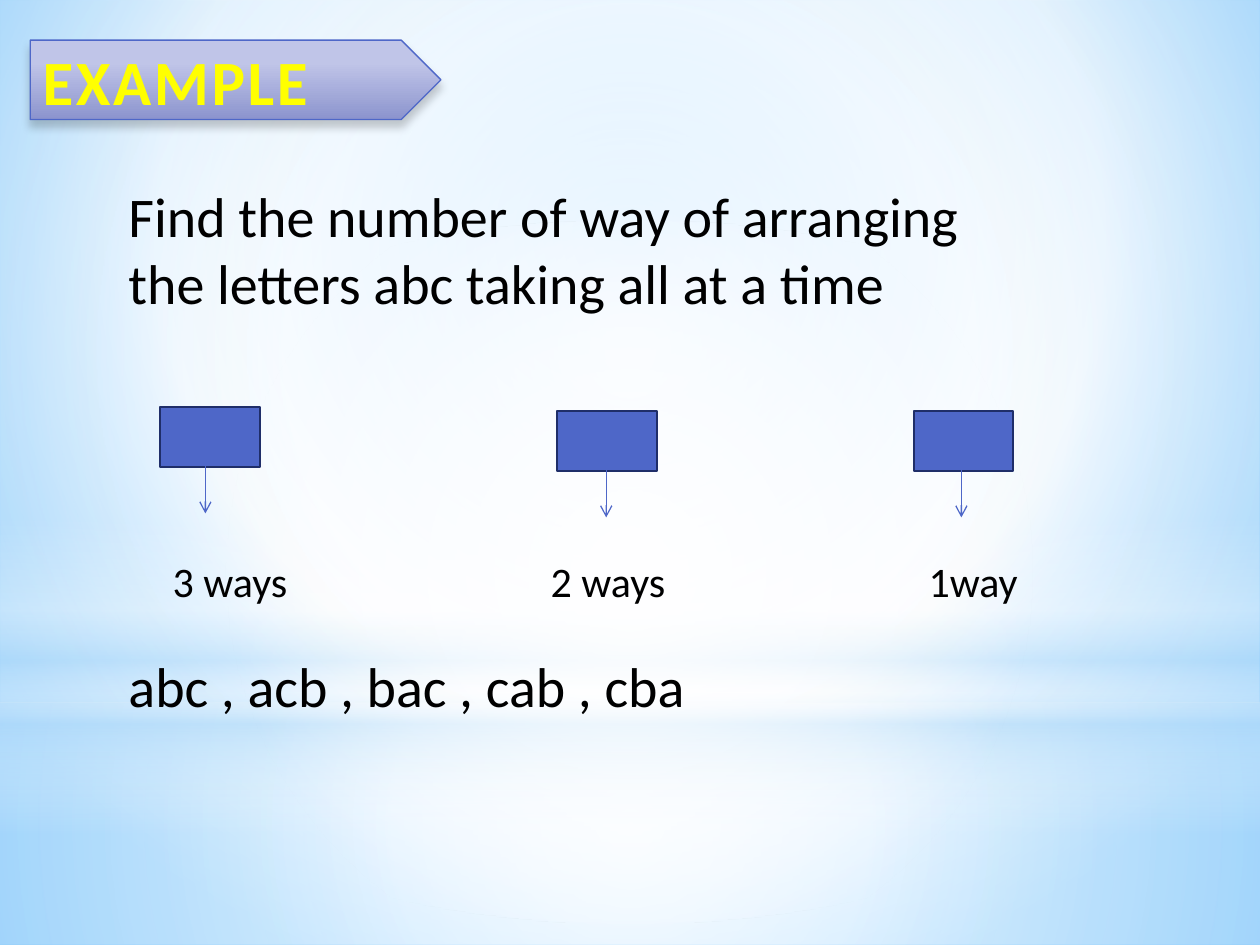
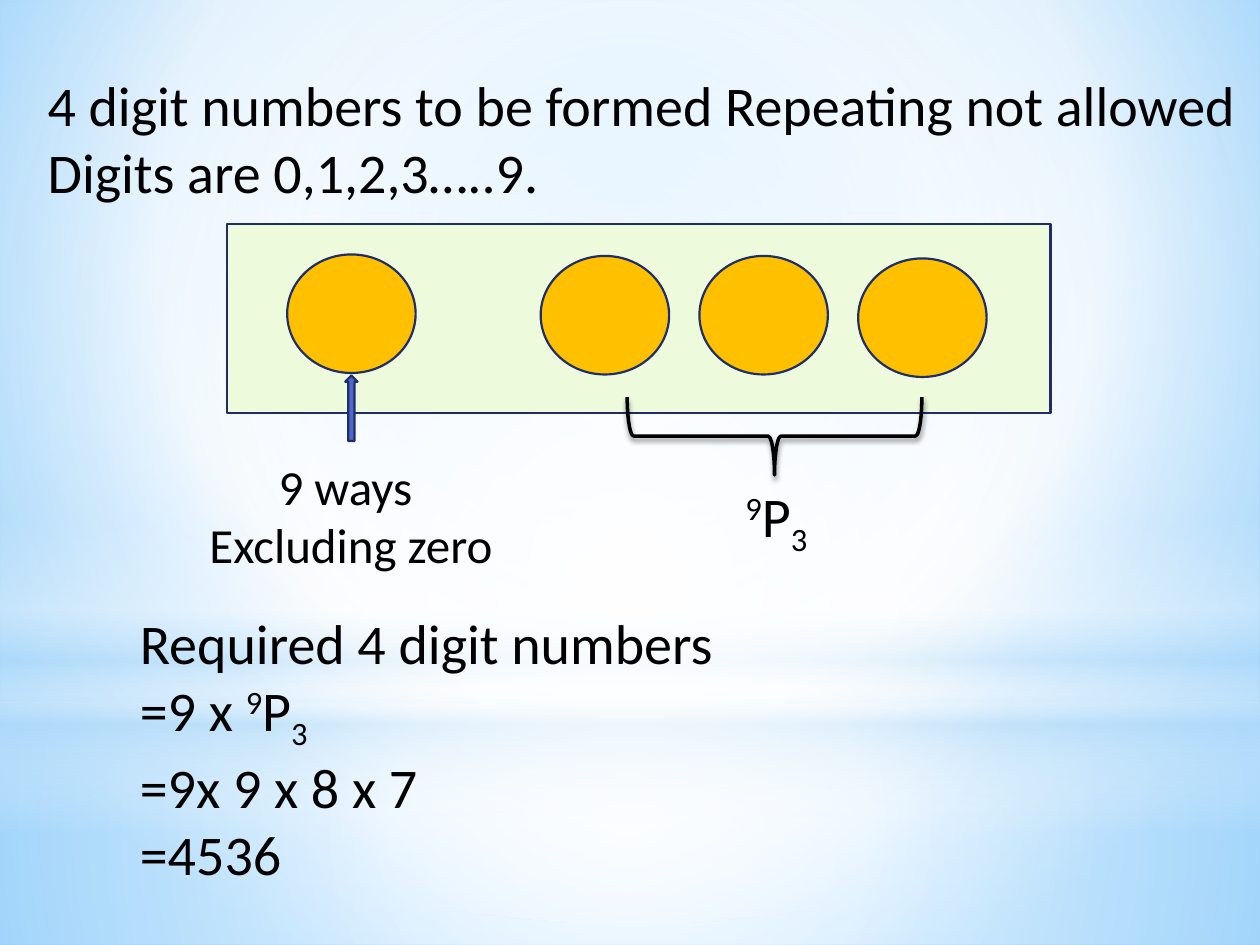
from lxml import etree
from pptx import Presentation
from pptx.dml.color import RGBColor
from pptx.enum.shapes import MSO_CONNECTOR, MSO_SHAPE
from pptx.enum.text import MSO_ANCHOR, PP_ALIGN
from pptx.oxml.ns import qn
from pptx.util import Cm, Pt

RECT, OVAL = MSO_SHAPE.RECTANGLE, MSO_SHAPE.OVAL
TAG, UP_ARROW, BRACE = MSO_SHAPE.PENTAGON, MSO_SHAPE.UP_ARROW, MSO_SHAPE.LEFT_BRACE
STRAIGHT = MSO_CONNECTOR.STRAIGHT
LEFT, CENTER = PP_ALIGN.LEFT, PP_ALIGN.CENTER
TOP, MIDDLE = MSO_ANCHOR.TOP, MSO_ANCHOR.MIDDLE

FONT = "Calibri"
BLACK, WHITE, YELLOW = "000000", "FFFFFF", "FFFF00"
BLUE, NAVY, SKY = "4E67C8", "1F2E69", "B4DCFA"
GREEN, ORANGE = "EDFBDC", "FFC000"
SUP, SUB = 30, -25
MIDPOINT = (50, 50, 50, 50)

BACKGROUND = [(0, "9ED5FF", 100), (60, WHITE, 100), (100, "5BB9FF", 100)]
BACKGROUND_FOCUS = (20, 10, 20, 60)
GLOWS = [
    (RECT, (0, 14.17, 25.4, 4.88), [(0, WHITE, 91), (37, WHITE, 76), (100, SKY, 79)], MIDPOINT),
    (RECT, (0, 0, 25.4, 14.17), [(0, WHITE, 89), (48, WHITE, 62), (100, SKY, 79)], MIDPOINT),
    (RECT, (0, 10.46, 25.4, 6.35),
     [(0, WHITE, 0), (29, WHITE, 30), (45, SKY, 40), (55, WHITE, 26), (65, SKY, 60), (100, WHITE, 0)], None),
    (OVAL, (0, 4.45, 25.4, 14.17), [(0, WHITE, 100), (56, WHITE, 0)], MIDPOINT),
]

HEADING = "EXAMPLE"
HEADING_FILL = [(28, "C0C5E8", 100), (100, "8C94CE", 100)]
LETTER_QUESTION = ["Find the number of way of arranging", "the letters abc taking all at a time"]
LETTER_SLOTS = [(3.23, 8.2, 4.14), (11.23, 8.28, 12.22), (18.42, 8.28, 19.38)]
SLOT_WAYS = ["3 ways", "2 ways", "1way"]
WAYS_STEP = 7.62
ARRANGEMENTS = ["abc , acb , bac , cab , cba"]

DIGIT_QUESTION = ["4 digit numbers to be formed Repeating not allowed", "Digits are 0,1,2,3…..9."]
DIGIT_CIRCLES = [(5.79, 5.13), (10.9, 5.16), (14.1, 5.16), (17.3, 5.21)]
FIRST_DIGIT = ["9 ways ", "Excluding zero"]
PERMUTATION = [("9", SUP), ("P", 0), ("3", SUB)]
SOLUTION = ["Required 4 digit numbers", [("=9 x ", 0)] + PERMUTATION, "=9x 9 x 8 x 7", "=4536"]


def rgb(color):
    return RGBColor.from_string(color)


def add_xml(parent, tag, **attrs):
    return etree.SubElement(parent, qn(tag), {k: str(v) for k, v in attrs.items()})


def add_color(parent, color, alpha):
    clr = add_xml(parent, "a:srgbClr", val=color)
    if alpha < 100:
        add_xml(clr, "a:alpha", val=alpha * 1000)


def set_gradient(fill, root, stops, focus=None):
    fill.solid()
    fill.fore_color.rgb = rgb(WHITE)
    old = next(root.iter(qn("a:solidFill")))
    grad = etree.Element(qn("a:gradFill"), rotWithShape="1")
    gs_list = add_xml(grad, "a:gsLst")
    for pos, color, alpha in stops:
        add_color(add_xml(gs_list, "a:gs", pos=pos * 1000), color, alpha)
    if focus:
        circle = add_xml(grad, "a:path", path="circle")
        add_xml(circle, "a:fillToRect", **{side: v * 1000 for side, v in zip("ltrb", focus)})
    else:
        add_xml(grad, "a:lin", ang=5400000, scaled=0)
    old.getparent().replace(old, grad)


def add_shadow(s, alpha, blur, dist):
    effects = s.element.spPr.find(qn("a:effectLst"))
    shadow = add_xml(effects, "a:outerShdw", blurRad=Pt(blur), dist=Pt(dist),
                     dir=5400000, algn="ctr", rotWithShape=0)
    add_color(shadow, BLACK, alpha)


def add_figure(slide, kind, box, fill=None, line=None, width=1.25):
    s = slide.shapes.add_shape(kind, *map(Cm, box))
    s.shadow.inherit = False
    if fill:
        s.fill.solid()
        s.fill.fore_color.rgb = rgb(fill)
    else:
        s.fill.background()
    if line:
        s.line.color.rgb = rgb(line)
        s.line.width = Pt(width)
    else:
        s.line.fill.background()
    return s


def write(tf, paragraphs, size=32, color=BLACK, bold=False, align=LEFT,
          anchor=TOP, wrap=True, spacing=0):
    tf.word_wrap = wrap
    tf.vertical_anchor = anchor
    for i, runs in enumerate(paragraphs):
        p = tf.add_paragraph() if i else tf.paragraphs[0]
        p.alignment = align
        for text, base in [(runs, 0)] if isinstance(runs, str) else runs:
            r = p.add_run()
            r.text = text
            r.font.name = FONT
            r.font.size = Pt(size)
            r.font.bold = bold
            r.font.color.rgb = rgb(color)
            rpr = r._r.get_or_add_rPr()
            if base:
                rpr.set("baseline", str(base * 1000))
            if spacing:
                rpr.set("spc", str(int(spacing * 100)))


def add_text(slide, box, paragraphs, **fmt):
    s = slide.shapes.add_textbox(*map(Cm, box))
    write(s.text_frame, paragraphs, **fmt)
    return s


def add_arrow(slide, x, top, bottom):
    s = slide.shapes.add_connector(STRAIGHT, Cm(x), Cm(top), Cm(x), Cm(bottom))
    s.line.color.rgb = rgb(BLUE)
    s.line.width = Pt(0.75)
    sp_pr = s.element.spPr
    add_xml(sp_pr.find(qn("a:ln")), "a:tailEnd", type="arrow")
    add_xml(sp_pr, "a:effectLst")


def decorate_master(master, slide):
    set_gradient(master.background.fill, master.element, BACKGROUND, BACKGROUND_FOCUS)
    for kind, box, stops, focus in GLOWS:
        s = add_figure(slide, kind, box)
        set_gradient(s.fill, s.element.spPr, stops, focus)
        master.shapes.element.append(s.element)


def build_letters(slide):
    add_text(slide, (2.34, 3.53, 21.16, 3), LETTER_QUESTION)
    for x, top, _ in LETTER_SLOTS:
        add_figure(slide, RECT, (x, top, 2.01, 1.22), BLUE, NAVY)
    for _, top, arrow_x in LETTER_SLOTS:
        add_arrow(slide, arrow_x, top + 0.97, top + 2.15)

    s = add_text(slide, (3.23, 11.07, 17.7, 1.27), ["\t".join(SLOT_WAYS)], size=24, wrap=False)
    ppr = s.text_frame.paragraphs[0]._p.get_or_add_pPr()
    tabs = add_xml(ppr, "a:tabLst")
    for i in range(1, len(SLOT_WAYS)):
        add_xml(tabs, "a:tab", pos=Cm(WAYS_STEP * i), algn="l")

    add_text(slide, (2.34, 13, 18.8, 1.63), ARRANGEMENTS)
    s = add_figure(slide, TAG, (0.61, 0.81, 8.28, 1.6), line=BLUE, width=0.75)
    set_gradient(s.fill, s.element.spPr, HEADING_FILL)
    add_shadow(s, 20, 5, 4)
    write(s.text_frame, [HEADING], size=36, color=YELLOW, bold=True, anchor=MIDDLE, spacing=1.5)


def build_digits(slide):
    add_text(slide, (0.71, 1.3, 24.99, 3), DIGIT_QUESTION, wrap=False)
    add_figure(slide, RECT, (4.57, 4.52, 16.61, 3.81), GREEN, NAVY)
    for x, y in DIGIT_CIRCLES:
        add_figure(slide, OVAL, (x, y, 2.59, 2.39), ORANGE, NAVY)
    add_figure(slide, UP_ARROW, (6.96, 7.57, 0.25, 1.32), BLUE, NAVY)

    brace = add_figure(slide, BRACE, (14.83, 5.82, 1.57, 5.94), line=BLACK, width=2)
    brace.rotation = 270
    add_shadow(brace, 45, 3.1, 1.8)

    add_text(slide, (3.94, 9.07, 6.27, 2.64), FIRST_DIGIT, size=28, align=CENTER, wrap=False)
    add_text(slide, (14.71, 9.58, 1.88, 1.63), [PERMUTATION], align=CENTER, wrap=False)
    add_text(slide, (2.57, 12.14, 12.45, 5.74), SOLUTION, wrap=False)


def main():
    prs = Presentation()
    prs.slide_width, prs.slide_height = Cm(25.4), Cm(19.05)
    blank = prs.slide_layouts[6]
    letters, digits = (prs.slides.add_slide(blank) for _ in range(2))
    decorate_master(prs.slide_master, letters)
    build_letters(letters)
    build_digits(digits)
    prs.save("out.pptx")


if __name__ == "__main__":
    main()
